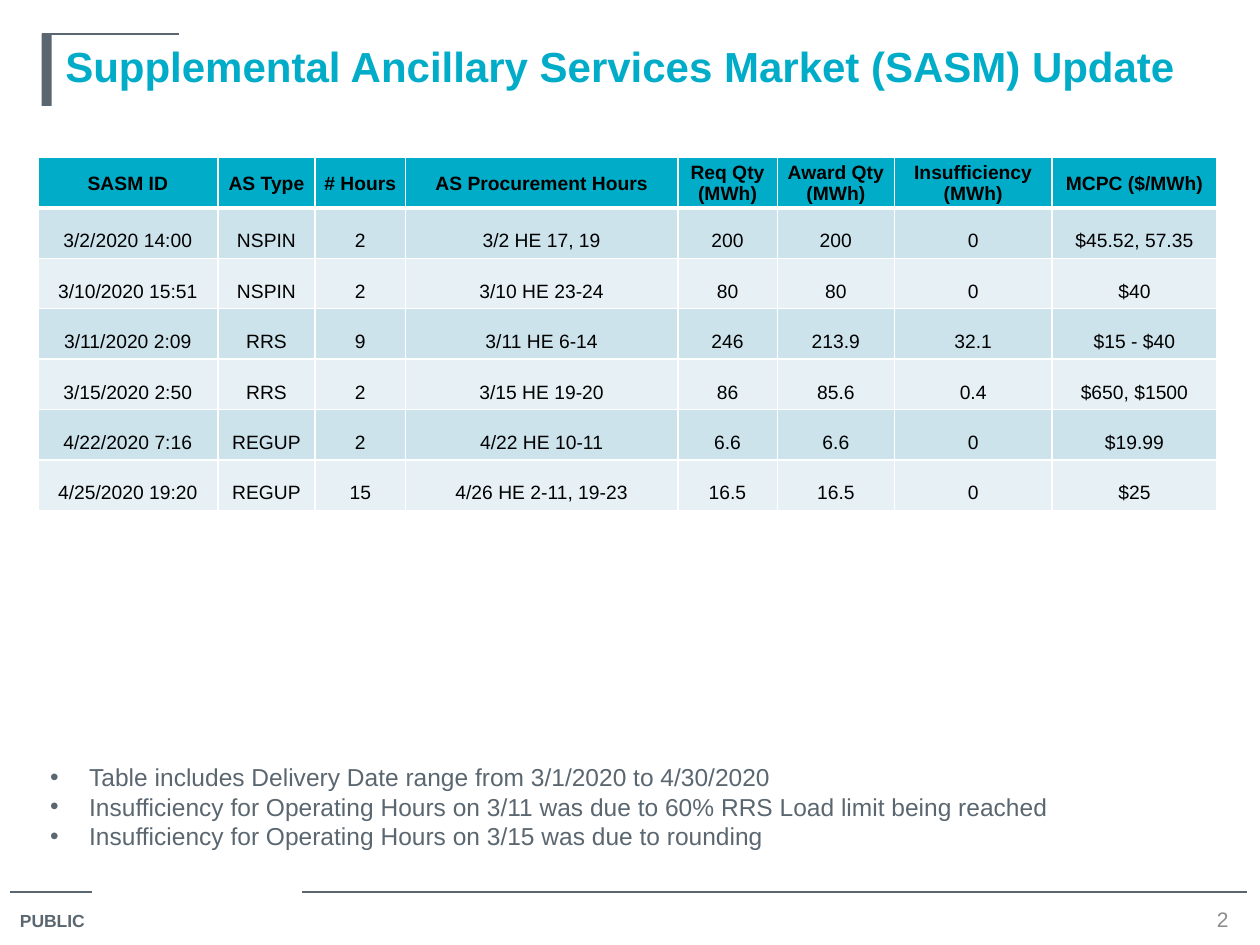
from dataclasses import dataclass

from lxml import etree
from pptx import Presentation
from pptx.dml.color import RGBColor
from pptx.enum.shapes import MSO_CONNECTOR, MSO_SHAPE
from pptx.enum.text import MSO_ANCHOR, PP_ALIGN
from pptx.oxml.ns import qn
from pptx.util import Inches, Pt

CENTER, LEFT = PP_ALIGN.CENTER, PP_ALIGN.LEFT
TOP, MIDDLE, BOTTOM = MSO_ANCHOR.TOP, MSO_ANCHOR.MIDDLE, MSO_ANCHOR.BOTTOM

SLATE = RGBColor(0x5B, 0x67, 0x70)
TEAL = RGBColor(0x00, 0xAC, 0xC8)
GRAY = RGBColor(0x8C, 0x8C, 0x8C)
BLACK = RGBColor(0, 0, 0)
WHITE = RGBColor(0xFF, 0xFF, 0xFF)
ODD_ROW = RGBColor(0xCC, 0xE3, 0xEB)
EVEN_ROW = RGBColor(0xE7, 0xF1, 0xF5)

FONT = "Arial"
ROW_HEIGHT = 0.4
THIN, THICK = 1, 3
BULLET_INDENT = Inches(0.31)

COLUMN_WIDTHS = (1.43, 0.77, 0.72, 2.16, 0.79, 0.93, 1.25, 1.31)
HEADERS = ("SASM ID", "AS Type", "# Hours", "AS Procurement Hours", "Req Qty\n(MWh)",
           "Award Qty\n(MWh)", "Insufficiency\n(MWh)", "MCPC ($/MWh)")
MARKETS = (
    ("3/2/2020 14:00", "NSPIN", "2", "3/2 HE 17, 19", "200", "200", "0", "$45.52, 57.35"),
    ("3/10/2020 15:51", "NSPIN", "2", "3/10 HE 23-24", "80", "80", "0", "$40"),
    ("3/11/2020 2:09", "RRS", "9", "3/11 HE 6-14", "246", "213.9", "32.1", "$15 - $40"),
    ("3/15/2020 2:50", "RRS", "2", "3/15 HE 19-20", "86", "85.6", "0.4", "$650, $1500"),
    ("4/22/2020 7:16", "REGUP", "2", "4/22 HE 10-11", "6.6", "6.6", "0", "$19.99"),
    ("4/25/2020 19:20", "REGUP", "15", "4/26 HE 2-11, 19-23", "16.5", "16.5", "0", "$25"),
)
NOTES = (
    "Table includes Delivery Date range from 3/1/2020 to 4/30/2020",
    "Insufficiency for Operating Hours on 3/11 was due to 60% RRS Load limit being reached",
    "Insufficiency for Operating Hours on 3/15 was due to rounding",
)


@dataclass(frozen=True)
class Rule:
    left: float
    right: float
    y: float


@dataclass(frozen=True)
class TextStyle:
    size: int
    color: RGBColor
    bold: bool = False
    align: PP_ALIGN = LEFT
    anchor: MSO_ANCHOR = TOP


@dataclass(frozen=True)
class TextBlock:
    left: float
    top: float
    width: float
    height: float
    lines: tuple[str, ...]
    style: TextStyle
    side_margin: float = 0.1
    bulleted: bool = False


RULES = (Rule(0.08, 0.73, 7.08), Rule(2.4, 9.9, 7.08), Rule(0.33, 1.42, 0.27))
HEADER_STYLE = TextStyle(11, BLACK, True, CENTER, MIDDLE)
BODY_STYLE = TextStyle(11, BLACK, False, CENTER, BOTTOM)
TEXT_BLOCKS = (
    TextBlock(0.06, 7.17, 0.77, 0.28, ("PUBLIC",), TextStyle(10, SLATE, True)),
    TextBlock(0.42, 0.27, 9.25, 1.25,
              ("Supplemental Ancillary Services Market (SASM) Update",),
              TextStyle(24, TEAL, True)),
    TextBlock(9.58, 7.18, 0.25, 0.23, ("2",),
              TextStyle(12, GRAY, False, CENTER, MIDDLE), side_margin=0),
    TextBlock(0.3, 6, 8.16, 0.81, NOTES, TextStyle(14, SLATE), bulleted=True),
)


def draw_rule(slide, rule: Rule) -> None:
    line = slide.shapes.add_connector(
        MSO_CONNECTOR.STRAIGHT, Inches(rule.left), Inches(rule.y),
        Inches(rule.right), Inches(rule.y))
    line.line.color.rgb = SLATE
    line.line.width = Pt(0.75)
    etree.SubElement(line._element.spPr, qn("a:effectLst"))


def draw_title_bar(slide) -> None:
    bar = slide.shapes.add_shape(
        MSO_SHAPE.RECTANGLE, Inches(0.33), Inches(0.27), Inches(0.08), Inches(0.57))
    bar.shadow.inherit = False
    bar.fill.solid()
    bar.fill.fore_color.rgb = SLATE
    bar.line.fill.background()


def add_text(paragraph, text: str, style: TextStyle) -> None:
    """Add the text as styled runs, with a line break at each newline."""
    paragraph.alignment = style.align
    for number, part in enumerate(text.split("\n")):
        if number:
            paragraph.add_line_break()
        run = paragraph.add_run()
        run.text = part
        run.font.name = FONT
        run.font.size = Pt(style.size)
        run.font.bold = style.bold
        run.font.color.rgb = style.color


def add_bullet(paragraph) -> None:
    properties = paragraph._p.get_or_add_pPr()
    properties.set("marL", str(BULLET_INDENT))
    properties.set("indent", str(-BULLET_INDENT))
    etree.SubElement(properties, qn("a:buFont"), typeface=FONT)
    etree.SubElement(properties, qn("a:buChar"), char="•")


def draw_text(slide, block: TextBlock) -> None:
    frame = slide.shapes.add_textbox(
        Inches(block.left), Inches(block.top),
        Inches(block.width), Inches(block.height)).text_frame
    frame.word_wrap = True
    frame.vertical_anchor = block.style.anchor
    frame.margin_left = frame.margin_right = Inches(block.side_margin)
    for number, text in enumerate(block.lines):
        paragraph = frame.add_paragraph() if number else frame.paragraphs[0]
        if block.bulleted:
            add_bullet(paragraph)
        add_text(paragraph, text, block.style)


def set_borders(cell, top: int, bottom: int) -> None:
    """Draw white borders; the weights are in points."""
    properties = cell._tc.get_or_add_tcPr()
    weights = {"a:lnL": THIN, "a:lnR": THIN, "a:lnT": top, "a:lnB": bottom}
    for side, weight in weights.items():
        border = etree.SubElement(properties, qn(side), w=str(Pt(weight)))
        fill = etree.SubElement(border, qn("a:solidFill"))
        etree.SubElement(fill, qn("a:srgbClr"), val=str(WHITE))


def draw_market_table(slide) -> None:
    rows = (HEADERS, *MARKETS)
    table = slide.shapes.add_table(
        len(rows), len(HEADERS), Inches(0.3), Inches(1.25),
        Inches(sum(COLUMN_WIDTHS)), Inches(ROW_HEIGHT * len(rows))).table
    for column, width in zip(table.columns, COLUMN_WIDTHS):
        column.width = Inches(width)
    for row_number, values in enumerate(rows):
        table.rows[row_number].height = Inches(ROW_HEIGHT)
        is_header = row_number == 0
        style = HEADER_STYLE if is_header else BODY_STYLE
        band = TEAL if is_header else ODD_ROW if row_number % 2 else EVEN_ROW
        for column_number, value in enumerate(values):
            cell = table.cell(row_number, column_number)
            set_borders(cell, top=THICK if row_number == 1 else THIN,
                        bottom=THICK if is_header else THIN)
            cell.fill.solid()
            cell.fill.fore_color.rgb = band
            cell.vertical_anchor = style.anchor
            if is_header:
                cell.margin_left = cell.margin_right = cell.margin_top = Inches(0.01)
                cell.margin_bottom = 0
            add_text(cell.text_frame.paragraphs[0], value, style)


def main() -> None:
    presentation = Presentation()
    presentation.slide_width = Inches(10)
    presentation.slide_height = Inches(7.5)
    slide = presentation.slides.add_slide(presentation.slide_layouts[6])
    for rule in RULES:
        draw_rule(slide, rule)
    draw_title_bar(slide)
    for block in TEXT_BLOCKS:
        draw_text(slide, block)
    draw_market_table(slide)
    presentation.save("out.pptx")


if __name__ == "__main__":
    main()
